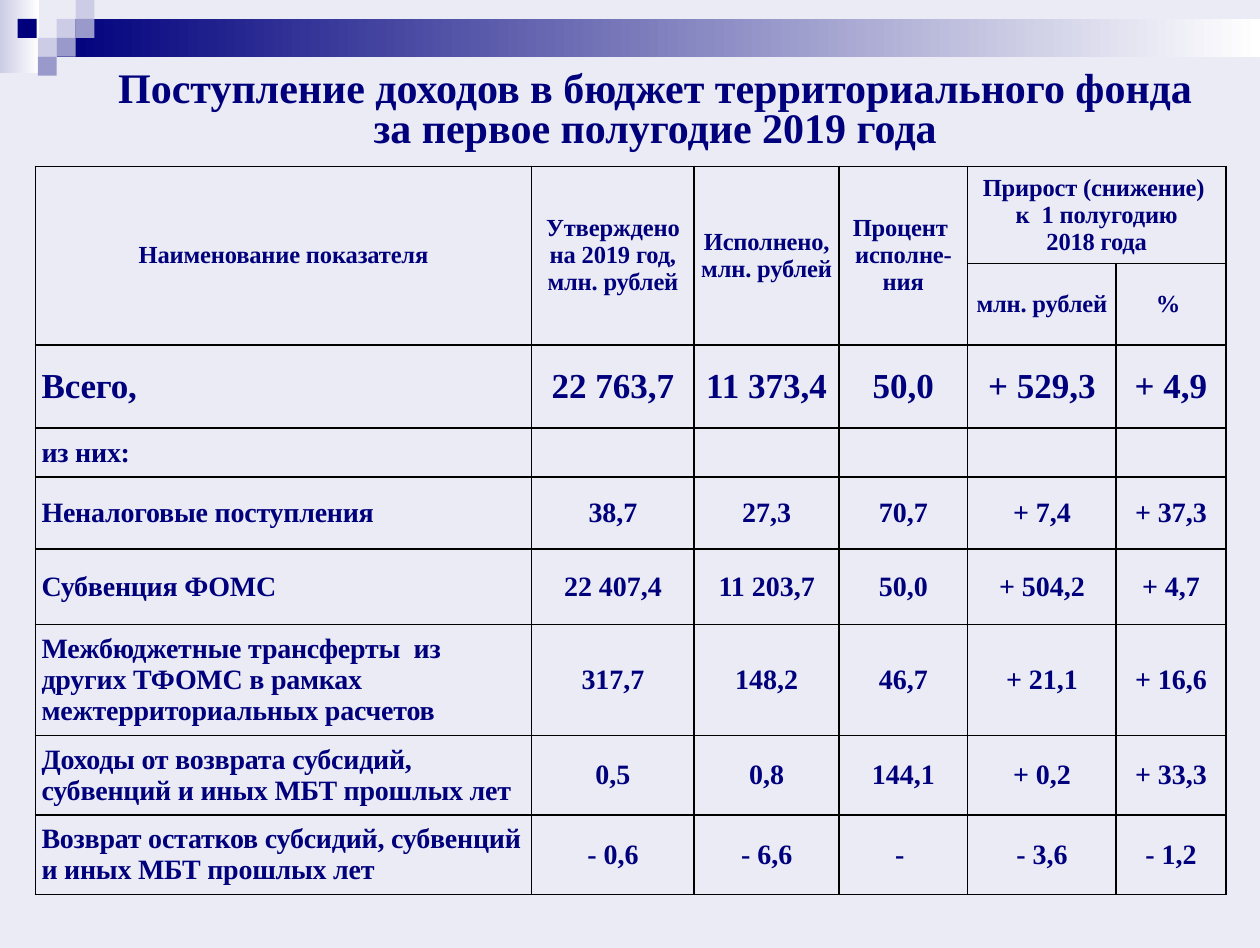
"""Build the slide on territorial fund revenue for the first half of 2019."""
from lxml import etree
from pptx import Presentation
from pptx.dml.color import RGBColor
from pptx.enum.shapes import MSO_SHAPE
from pptx.enum.text import MSO_ANCHOR, PP_ALIGN
from pptx.oxml.ns import qn
from pptx.util import Inches, Pt

RECT = MSO_SHAPE.RECTANGLE
MIDDLE = MSO_ANCHOR.MIDDLE
LEFT, CENTER = PP_ALIGN.LEFT, PP_ALIGN.CENTER
NAVY = RGBColor(0x00, 0x00, 0x7D)
LILAC = RGBColor(0xCC, 0xCC, 0xE6)
VIOLET = RGBColor(0x99, 0x99, 0xCC)
WHITE = RGBColor(0xFF, 0xFF, 0xFF)
PALE = RGBColor(0xEB, 0xEB, 0xF5)
FONT = "Times New Roman"
TILE = 0.15


def add_text(p, text, size, align):
    p.alignment = align
    r = p.add_run()
    r.text = text
    r.font.name = FONT
    r.font.size = Pt(size)
    r.font.bold = True
    r.font.color.rgb = NAVY
    return r


def add_rect(x, y, w, h, colors):
    sp = s.shapes.add_shape(RECT, Inches(x), Inches(y), Inches(w), Inches(h))
    sp.shadow.inherit = False
    sp.line.fill.background()
    if len(colors) == 1:
        sp.fill.solid()
        sp.fill.fore_color.rgb = colors[0]
    else:
        sp.fill.gradient()
        sp.fill.gradient_angle = 0
        for stop, color in zip(sp.fill.gradient_stops, colors):
            stop.color.rgb = color


prs = Presentation()
prs.slide_width, prs.slide_height = Inches(10), Inches(7.52)
s = prs.slides.add_slide(prs.slide_layouts[5])
s.background.fill.solid()
s.background.fill.fore_color.rgb = PALE

add_rect(0, 0, 0.31, 0.58, [LILAC, WHITE])
add_rect(0.45, 0.15, 9.55, 0.3, [NAVY, WHITE])
tiles = [
    (0.45, 0.15, LILAC), (0.6, 0, LILAC), (0.6, 0.15, VIOLET), (0.3, 0.3, LILAC),
    (0.14, 0.15, NAVY), (0.45, 0.3, VIOLET), (0.3, 0.45, VIOLET),
]
for x, y, color in tiles:
    add_rect(x, y, TILE, TILE, [color])

title = s.shapes.title
title.left, title.top = Inches(0.67), Inches(0.45)
title.width, title.height = Inches(9.06), Inches(0.87)
tf = title.text_frame
tf.word_wrap = True
tf.vertical_anchor = MIDDLE
p = tf.paragraphs[0]
p.line_spacing = 0.8
add_text(p, "Поступление доходов в бюджет территориального фонда "
            "за первое полугодие 2019 года", 24, CENTER)

col_widths = [3.94, 1.29, 1.15, 1.02, 1.18, 0.87]
row_heights = [0.77, 0.47, 0.66, 0.39, 0.57, 0.6, 0.88, 0.63, 0.63]
rows = [
    ["Наименование показателя", "Утверждено\nна 2019 год,\nмлн. рублей",
     "Исполнено, млн. рублей", "Процент \nисполне-ния",
     "Прирост (снижение) \nк  1 полугодию\n2018 года", ""],
    ["", "", "", "", "млн. рублей", "% "],
    ["Всего, ", "22 763,7", "11 373,4", "50,0", "+ 529,3", "+ 4,9"],
    ["из них:", "", "", "", "", ""],
    ["Неналоговые поступления", "38,7", "27,3", "70,7", "+ 7,4", "+ 37,3"],
    ["Субвенция ФОМС", "22 407,4", "11 203,7", "50,0", "+ 504,2", "+ 4,7"],
    ["Межбюджетные трансферты  из  других ТФОМС в рамках  межтерриториальных расчетов",
     "317,7", "148,2", "46,7", "+ 21,1", "+ 16,6"],
    ["Доходы от возврата субсидий, субвенций и иных МБТ прошлых лет",
     "0,5", "0,8", "144,1", "+ 0,2", "+ 33,3"],
    ["Возврат остатков субсидий, субвенций и иных МБТ прошлых лет",
     "- 0,6", "- 6,6", "- ", "- 3,6", "- 1,2"],
]
table = s.shapes.add_table(len(rows), len(col_widths), Inches(0.28), Inches(1.32),
                           Inches(9.45), Inches(5.6)).table
table.first_row = table.horz_banding = False
for column, width in zip(table.columns, col_widths):
    column.width = Inches(width)
for row, height in zip(table.rows, row_heights):
    row.height = Inches(height)
for j in range(4):
    table.cell(0, j).merge(table.cell(1, j))
table.cell(0, 4).merge(table.cell(0, 5))

for i, values in enumerate(rows):
    size = 14 if i < 2 else 20 if i == 2 else 16
    for j, value in enumerate(values):
        cell = table.cell(i, j)
        cell.vertical_anchor = MIDDLE
        cell.margin_left = cell.margin_right = Inches(0.05)
        cell.margin_top = cell.margin_bottom = 0
        tcPr = cell._tc.get_or_add_tcPr()
        for side in ("a:lnL", "a:lnR", "a:lnT", "a:lnB"):
            ln = etree.SubElement(tcPr, qn(side), w=str(Pt(1)))
            fill = etree.SubElement(ln, qn("a:solidFill"))
            etree.SubElement(fill, qn("a:srgbClr"), val="000000")
        cell.fill.background()
        if not value:
            continue
        tf = cell.text_frame
        for k, line in enumerate(value.split("\n")):
            p = tf.paragraphs[0] if k == 0 else tf.add_paragraph()
            r = add_text(p, line, size, LEFT if j == 0 and i > 1 else CENTER)
            if i < 2 or j == 0:
                r._r.get_or_add_rPr().set("spc", "-10")

prs.save("out.pptx")
